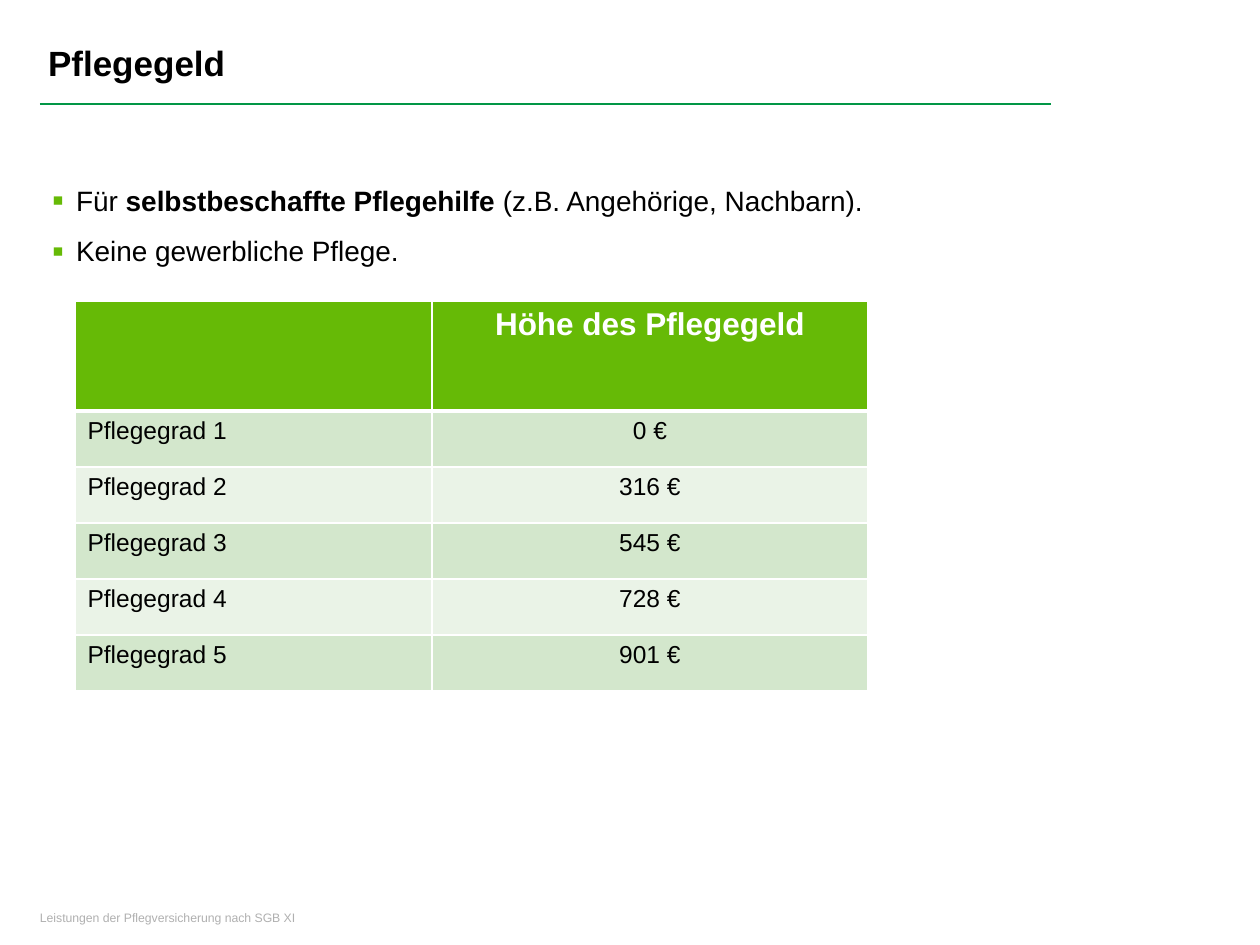
from lxml import etree
from pptx import Presentation, util as u
from pptx.dml.color import RGBColor
from pptx.enum import shapes, text
from pptx.oxml.ns import qn

TITLE = "Pflegegeld"
FOOTER = "Leistungen der Pflegversicherung nach SGB XI"
BULLETS = [
    [("Für ", False), ("selbstbeschaffte Pflegehilfe ", True),
     ("(z.B. Angehörige, Nachbarn).", False)],
    [("Keine gewerbliche Pflege.", False)],
]
ROWS = [
    ("", "Höhe des Pflegegeld"),
    ("Pflegegrad 1", "0 €"),
    ("Pflegegrad 2", "316 €"),
    ("Pflegegrad 3", "545 €"),
    ("Pflegegrad 4", "728 €"),
    ("Pflegegrad 5", "901 €"),
]
COLORS = {"black": "000000", "white": "FFFFFF", "footer": "B0B0B0", "rule": "029646",
          "green": "66BA06", "dark band": "D3E7CC", "light band": "EAF3E7"}
FONT = "Arial"
COLUMN_WIDTHS = [357, 436]
HEADER_HEIGHT, ROW_HEIGHT = 110, 56


def px(value):
    return u.Emu(round(value * 914400 / 126))


def color(name):
    return RGBColor.from_string(COLORS[name])


def set_font(font, size, name, bold=None):
    font.name, font.size, font.bold = FONT, u.Pt(size), bold
    font.color.rgb = color(name)


def set_frame(frame, margins, anchor):
    frame.word_wrap = True
    frame.auto_size = text.MSO_AUTO_SIZE.NONE
    frame.vertical_anchor = anchor
    (frame.margin_left, frame.margin_top,
     frame.margin_right, frame.margin_bottom) = map(px, margins)


def add_bullet(para):
    props = para._p.get_or_add_pPr()
    props.set("marL", str(px(24)))
    props.set("indent", str(-px(24)))
    bullet_color = etree.SubElement(props, qn("a:buClr"))
    etree.SubElement(bullet_color, qn("a:srgbClr"), val=COLORS["green"])
    etree.SubElement(props, qn("a:buSzPct"), val="120000")
    etree.SubElement(props, qn("a:buFont"), typeface=FONT)
    etree.SubElement(props, qn("a:buChar"), char="▪")


def set_borders(cell, bottom_width):
    props = cell._tc.get_or_add_tcPr()
    widths = {"lnL": 1, "lnR": 1, "lnT": 1, "lnB": bottom_width}
    for position, (side, width) in enumerate(widths.items()):
        line = etree.Element(qn(f"a:{side}"), w=str(u.Pt(width)))
        fill = etree.SubElement(line, qn("a:solidFill"))
        etree.SubElement(fill, qn("a:srgbClr"), val=COLORS["white"])
        props.insert(position, line)


def add_title(page):
    title = page.shapes.title
    title.left, title.top, title.width, title.height = map(px, (38, 34, 959, 59))
    set_frame(title.text_frame, (10, 8, 10, 5), text.MSO_ANCHOR.TOP)
    para = title.text_frame.paragraphs[0]
    para.text = TITLE
    para.alignment = text.PP_ALIGN.LEFT
    set_font(para.font, 20, "black", True)


def add_rule(page):
    rule = page.shapes.add_connector(
        shapes.MSO_CONNECTOR.STRAIGHT, *map(px, (40, 104, 1051, 104)))
    rule.line.color.rgb = color("rule")
    rule.line.width = u.Pt(1.25)
    etree.SubElement(rule._element.spPr, qn("a:effectLst"))


def add_bullets(page):
    box = page.shapes.add_textbox(*map(px, (42, 175, 1037, 126)))
    frame = box.text_frame
    set_frame(frame, (10, 5, 10, 5), text.MSO_ANCHOR.TOP)
    for index, spans in enumerate(BULLETS):
        para = frame.add_paragraph() if index else frame.paragraphs[0]
        add_bullet(para)
        para.line_spacing = u.Pt(21)
        if index:
            para.space_before = u.Pt(8)
        set_font(para.font, 16, "black")
        for words, bold in spans:
            span = para.add_run()
            span.text = words
            span.font.bold = bold


def add_amounts(page):
    height = HEADER_HEIGHT + ROW_HEIGHT * (len(ROWS) - 1)
    table = page.shapes.add_table(len(ROWS), len(COLUMN_WIDTHS), px(75), px(301),
                                  px(sum(COLUMN_WIDTHS)), px(height)).table
    for column, width in zip(table.columns, COLUMN_WIDTHS):
        column.width = px(width)
    for r, values in enumerate(ROWS):
        header = r == 0
        table.rows[r].height = px(HEADER_HEIGHT if header else ROW_HEIGHT)
        band = "green" if header else "dark band" if r % 2 else "light band"
        for c, value in enumerate(values):
            cell = table.cell(r, c)
            cell.fill.solid()
            cell.fill.fore_color.rgb = color(band)
            set_borders(cell, 3 if header else 1)
            para = cell.text_frame.paragraphs[0]
            para.text = value
            para.alignment = text.PP_ALIGN.CENTER if c else text.PP_ALIGN.LEFT
            set_font(para.font, 18 if header else 14,
                     "white" if header else "black", header)


def add_footer(page):
    box = page.shapes.add_textbox(*map(px, (40, 908, 665, 24)))
    set_frame(box.text_frame, (0, 0, 10, 5), text.MSO_ANCHOR.MIDDLE)
    para = box.text_frame.paragraphs[0]
    para.text = FOOTER
    set_font(para.font, 7, "footer")


def main():
    deck = Presentation()
    deck.slide_width, deck.slide_height = px(1260), px(945)
    page = deck.slides.add_slide(deck.slide_layouts[5])
    for add_part in (add_footer, add_rule, add_title, add_bullets, add_amounts):
        add_part(page)
    deck.save("out.pptx")


if __name__ == "__main__":
    main()
